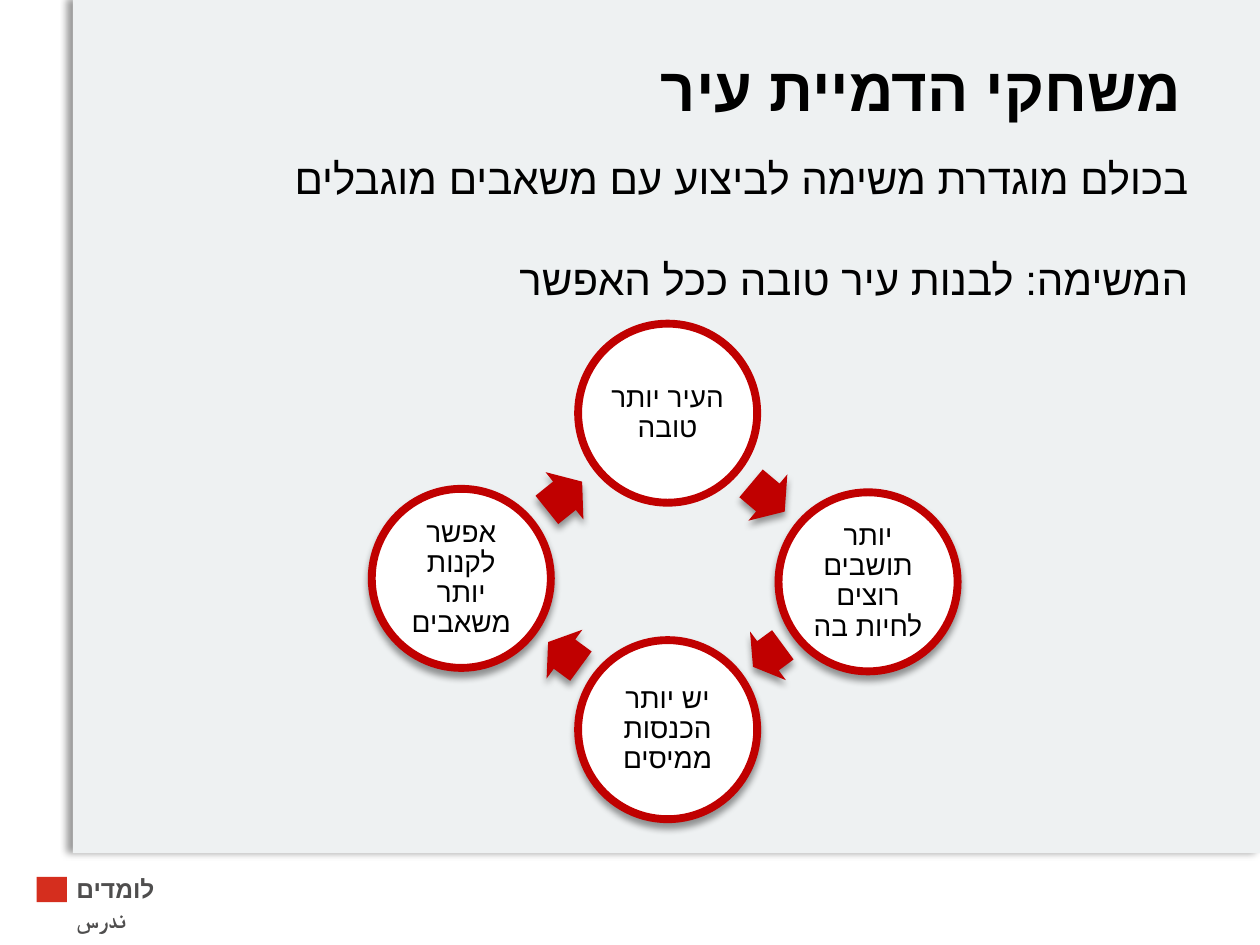
from itertools import pairwise
from math import atan2, degrees, hypot

from lxml.etree import SubElement
from pptx import Presentation
from pptx.dml.color import RGBColor
from pptx.enum.shapes import MSO_SHAPE as Shape
from pptx.enum.text import MSO_ANCHOR as Anchor, PP_ALIGN as Align
from pptx.oxml.ns import qn
from pptx.util import Cm, Pt

PANEL_GREY = RGBColor(0xEE, 0xF1, 0xF2)
WHITE = RGBColor(0xFF, 0xFF, 0xFF)
BLACK = RGBColor(0, 0, 0)
RED = RGBColor(0xC0, 0, 0)
MARKER_RED = RGBColor(0xD5, 0x2E, 0x1E)
FOOTER_GREY = RGBColor(0x4F, 0x4E, 0x4E)

CIRCLE_SIZE = 3.61
ARROW_WIDTH = 1.22
STEPS = [
    ("העיר יותר טובה", 5.97, 1.8),
    ("יותר תושבים רוצים לחיות בה", 10.01, 5.2),
    ("יש יותר הכנסות ממיסים", 5.97, 8.18),
    ("אפשר לקנות יותר משאבים", 1.81, 5.13),
]


def style_paragraph(paragraph, size, color=BLACK, bold=False, align=Align.RIGHT, rtl=True):
    """Set alignment, direction and font of one paragraph."""
    paragraph.alignment = align
    if rtl:
        paragraph._p.get_or_add_pPr().set("rtl", "1")
    font = paragraph.font
    font.name, font.size, font.bold = "Arial", Pt(size), bold
    font.color.rgb = color
    SubElement(font._element, qn("a:cs"), typeface="Arial")


def add_shadow(shape, direction):
    """Cast a soft black shadow towards the given angle."""
    effects = shape._element.spPr.find(qn("a:effectLst"))
    shadow = SubElement(effects, qn("a:outerShdw"), blurRad=str(Pt(4)), dist=str(Pt(3)),
                        dir=str(direction * 60000), algn="ctr", rotWithShape="0")
    black = SubElement(shadow, qn("a:srgbClr"), val=str(BLACK))
    SubElement(black, qn("a:alpha"), val="40000")


def add_solid(slide, kind, left, top, width, height, fill):
    """Add a filled shape without outline or shadow."""
    shape = slide.shapes.add_shape(kind, Cm(left), Cm(top), Cm(width), Cm(height))
    shape.shadow.inherit = False
    shape.fill.solid()
    shape.fill.fore_color.rgb = fill
    shape.line.fill.background()
    return shape


def add_text(slide, left, top, width, height):
    """Add a wrapping text box and return its text frame."""
    frame = slide.shapes.add_textbox(Cm(left), Cm(top), Cm(width), Cm(height)).text_frame
    frame.word_wrap = True
    return frame


def add_footer(slide, left, top, width, height):
    """Place a plain marker and the bilingual project name."""
    add_solid(slide, Shape.RECTANGLE, left, top + 0.18, 0.61, 0.51, MARKER_RED)
    frame = add_text(slide, left + 0.55, top, width - 0.55, height)
    frame.text = "לומדים\vندرس"
    style_paragraph(frame.paragraphs[0], 14, FOOTER_GREY, True, Align.LEFT, False)


def add_title(slide, left, top, width, height):
    """Place the slide heading, centred vertically in its box."""
    frame = add_text(slide, left, top, width, height)
    frame.vertical_anchor = Anchor.MIDDLE
    frame.text = "משחקי הדמיית עיר"
    heading = frame.paragraphs[0]
    heading.line_spacing = 0.9
    style_paragraph(heading, 35, bold=True)


def add_intro(slide, left, top, width, height):
    """Place the two statements above the cycle."""
    frame = add_text(slide, left, top, width, height)
    frame.text = "בכולם מוגדרת משימה לביצוע עם משאבים מוגבלים\nהמשימה: לבנות עיר טובה ככל האפשר"
    for statement in frame.paragraphs:
        style_paragraph(statement, 24)
    frame.paragraphs[1].space_before = Pt(29)


def add_step(slide, text, center_x, center_y):
    """Place one ringed step of the cycle around its centre."""
    circle = add_solid(slide, Shape.OVAL, center_x - CIRCLE_SIZE / 2, center_y - CIRCLE_SIZE / 2,
                       CIRCLE_SIZE, CIRCLE_SIZE, WHITE)
    circle.line.color.rgb = RED
    circle.line.width = Pt(4.5)
    frame = circle.text_frame
    frame.word_wrap = True
    frame.vertical_anchor = Anchor.MIDDLE
    frame.margin_left = frame.margin_right = frame.margin_top = frame.margin_bottom = Cm(0.05)
    frame.text = text
    label = frame.paragraphs[0]
    label.line_spacing = 0.9
    style_paragraph(label, 16, align=Align.CENTER, rtl=False)
    return circle


def add_cycle(slide, left, top):
    """Place the steps and the arrows halfway between neighbours."""
    centers = [(left + x, top + y) for _, x, y in STEPS]
    circles = [add_step(slide, step[0], *center) for step, center in zip(STEPS, centers)]
    for circle in circles[1:]:
        add_shadow(circle, 90)
    for (x1, y1), (x2, y2) in pairwise(centers + centers[:1]):
        length = 0.53 * (hypot(x2 - x1, y2 - y1) - CIRCLE_SIZE)
        arrow = add_solid(slide, Shape.RIGHT_ARROW, (x1 + x2 - length) / 2,
                          (y1 + y2 - ARROW_WIDTH) / 2, length, ARROW_WIDTH, RED)
        arrow.adjustments[0] = 0.6
        arrow.adjustments[1] = 0.5
        arrow.rotation = degrees(atan2(y2 - y1, x2 - x1)) % 360
        add_shadow(arrow, 90)


def main():
    """Build the slide and save it."""
    deck = Presentation()
    deck.slide_width, deck.slide_height = Cm(25.4), Cm(19.05)
    slide = deck.slides.add_slide(deck.slide_layouts[6])
    panel = add_solid(slide, Shape.RECTANGLE, 1.47, 0, 23.93, 17.2, PANEL_GREY)
    add_shadow(panel, 180)
    add_footer(slide, 0.74, 17.5, 3.68, 1.5)
    add_title(slide, 1.4, 0, 22.66, 3.68)
    add_intro(slide, 4.27, 2.95, 19.94, 4.37)
    add_cycle(slide, 7.49, 6.53)
    deck.save("out.pptx")


if __name__ == "__main__":
    main()
